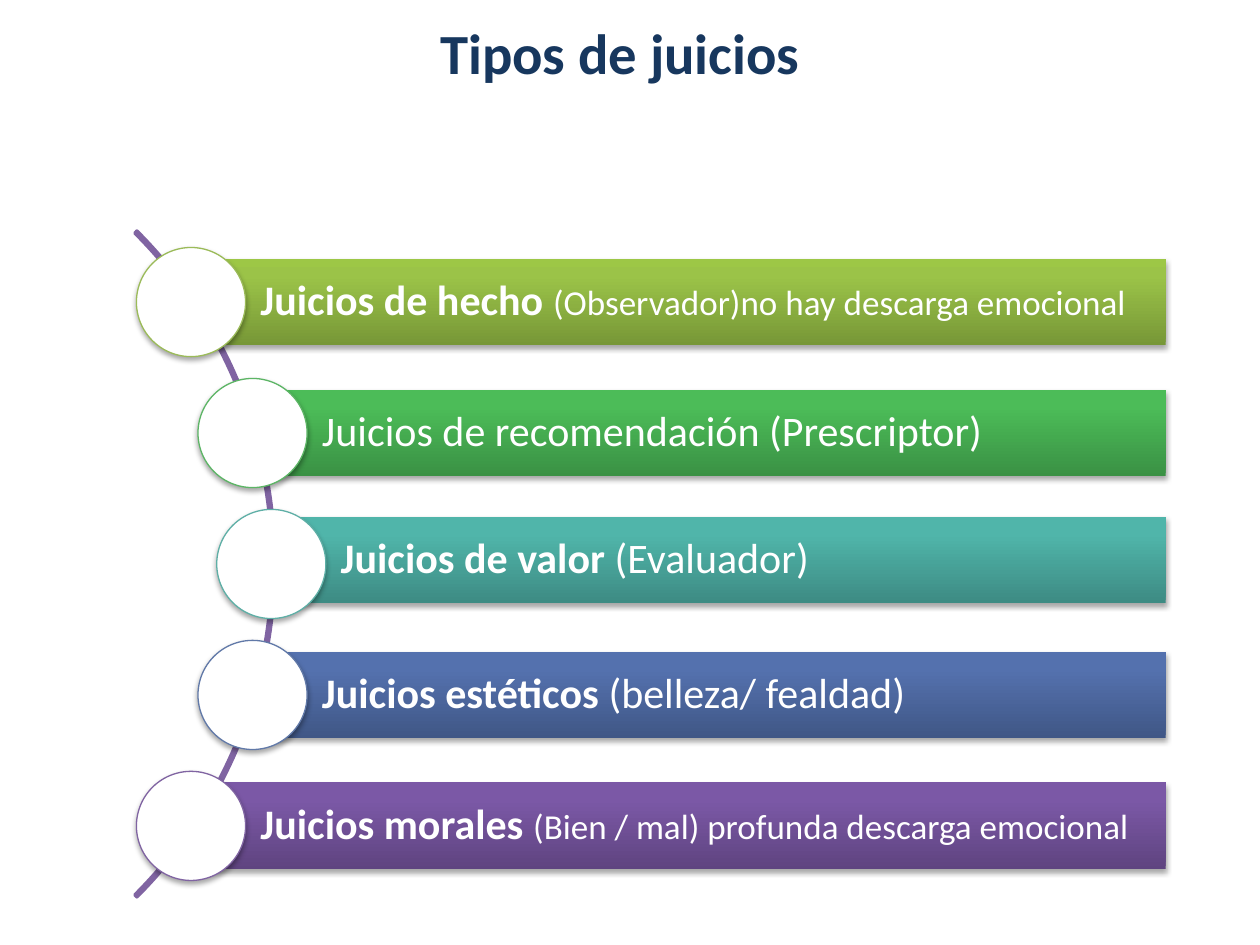
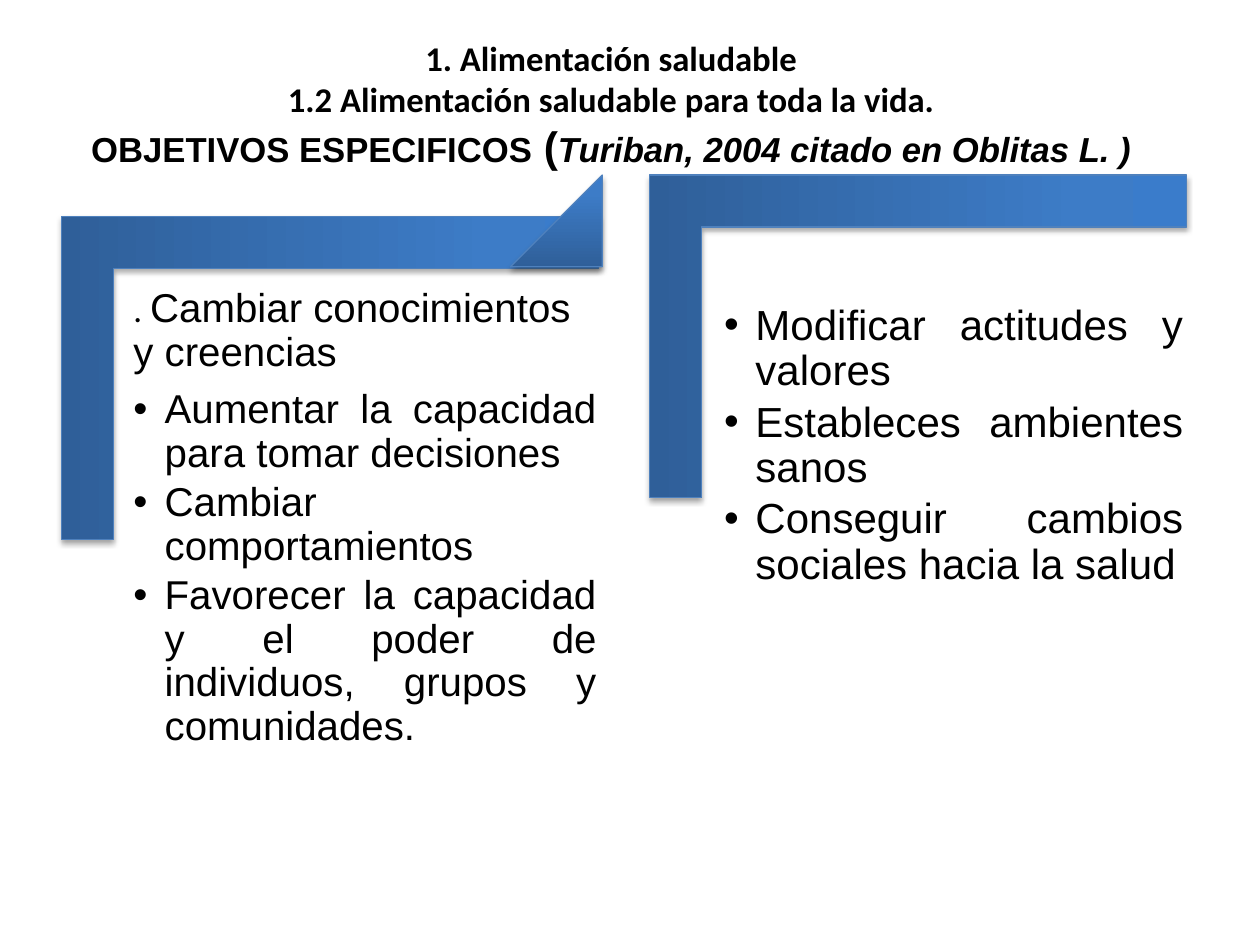
"""Builds two slides: the kinds of judgement and the aims of healthy eating."""
from copy import deepcopy
from math import sqrt

from lxml.etree import SubElement
from pptx import Presentation
from pptx.dml.color import RGBColor
from pptx.enum.shapes import MSO_SHAPE as Preset
from pptx.enum.text import MSO_ANCHOR as Anchor, MSO_AUTO_SIZE as AutoSize, PP_ALIGN as Align
from pptx.oxml.ns import qn
from pptx.util import Cm, Pt

WHITE, BLACK, NAVY = "FFFFFF", "000000", "17375E"
PURPLE, BLUE_EDGE = "8064A2", "4F81BD"
BLUE_GRADIENT = ("2F5F99", "3D7CC7", "3A7CCB")
STOPS = (0, 0.8, 1)


def rgb(code):
    return RGBColor.from_string(code)


def add_bullet(paragraph, indent=0.63):
    paragraph.level = 1
    props = paragraph._p.get_or_add_pPr()
    props.set("marL", str(Cm(indent)))
    props.set("indent", str(-Cm(indent)))
    SubElement(props, qn("a:buFont"), typeface="Arial")
    SubElement(props, qn("a:buChar"), char="•")


def write(frame, paragraphs, font="Calibri", size=24, color=BLACK, bold=False, align=Align.LEFT,
          anchor=Anchor.TOP, insets=(0.25, 0.13, 0.25, 0.13), spacing=None):
    """Fills a frame; a paragraph is (runs, is_bullet, space_after), a run (text, changes)."""
    frame.word_wrap = True
    frame.auto_size = AutoSize.NONE
    frame.vertical_anchor = anchor
    frame.margin_left, frame.margin_top, frame.margin_right, frame.margin_bottom = map(Cm, insets)
    for number, (runs, is_bullet, after) in enumerate(paragraphs):
        paragraph = frame.add_paragraph() if number else frame.paragraphs[0]
        if is_bullet:
            add_bullet(paragraph)
        paragraph.alignment = Align.JUSTIFY if is_bullet else align
        paragraph.space_after = Pt(after)
        if spacing:
            paragraph.line_spacing = spacing
        for text, changes in runs:
            style = {"font": font, "size": size, "bold": bold, "italic": False} | changes
            for index, line in enumerate(text.split("\n")):
                if index:
                    paragraph.add_line_break()
                run = paragraph.add_run()
                run.text = line
                run.font.name = style["font"]
                run.font.size = Pt(style["size"])
                run.font.bold = style["bold"]
                run.font.italic = style["italic"]
                run.font.color.rgb = rgb(color)


class Deck:
    """Holds the shared style and the current slide."""

    def __init__(self):
        self.file = Presentation()
        self.file.slide_width, self.file.slide_height = Cm(25.4), Cm(19.05)
        self.slide = None

    def add_slide(self, title, box, **style):
        self.slide = self.file.slides.add_slide(self.file.slide_layouts[5])
        heading = self.slide.shapes.title
        heading.left, heading.top, heading.width, heading.height = map(Cm, box)
        write(heading.text_frame, [(title, False, 0)], bold=True,
              align=Align.CENTER, anchor=Anchor.MIDDLE, **style)

    def shape(self, preset, box, fill=None, edge=None, edge_width=0.75, adjust=(), shadow=True):
        shape = self.slide.shapes.add_shape(preset, *map(Cm, box))
        for index, value in enumerate(adjust):
            shape.adjustments[index] = value
        if isinstance(fill, tuple):
            self.gradient(shape, fill)
        elif fill:
            shape.fill.solid()
            shape.fill.fore_color.rgb = rgb(fill)
        else:
            shape.fill.background()
        if edge:
            shape.line.color.rgb = rgb(edge)
            shape.line.width = Pt(edge_width)
        else:
            shape.line.fill.background()
        shape.shadow.inherit = False
        if shadow:
            self.drop_shadow(shape)
        return shape

    def gradient(self, shape, colors):
        shape.fill.gradient()
        shape.fill.gradient_angle = 90
        stop_list = shape._element.spPr.find(".//" + qn("a:gsLst"))
        stop_list.append(deepcopy(stop_list[0]))
        for stop, position, color in zip(shape.fill.gradient_stops, STOPS, colors):
            stop.position = position
            stop.color.rgb = rgb(color)

    def drop_shadow(self, shape):
        effects = shape._element.spPr.find(qn("a:effectLst"))
        outer = SubElement(effects, qn("a:outerShdw"), blurRad=str(Pt(3.1)),
                           dist=str(Pt(1.8)), dir="5400000", rotWithShape="0")
        shade = SubElement(outer, qn("a:srgbClr"), val=BLACK)
        SubElement(shade, qn("a:alpha"), val="35000")

    def corner(self, left, top, width=10.82, height=6.5):
        shift = (width - height) / 2
        box = (left + shift, top - shift, height, width)
        bracket = self.shape(Preset.CORNER, box, BLUE_GRADIENT, BLUE_EDGE, adjust=(0.161, 0.161))
        bracket.rotation = 90

    def text(self, box, paragraphs, **style):
        frame = self.slide.shapes.add_textbox(*map(Cm, box)).text_frame
        write(frame, paragraphs, **style)


def build_judgements(deck):
    deck.add_slide([("Tipos de juicios", {})], (1.07, 0.5, 22.86, 1.09), size=32.4, color=NAVY)
    center_x, center_y, arc_radius, ring_radius = -3.95, 11.37, 9.49, 9.42
    step, bar_height, bar_right, dot = 2.64, 1.75, 23.5, 2.2
    deck.shape(Preset.BLOCK_ARC,
               (center_x - arc_radius, center_y - arc_radius, 2 * arc_radius, 2 * arc_radius),
               edge=PURPLE, edge_width=2, adjust=(189, 27, 0.003), shadow=False)
    strong, small = {"bold": True}, {"size": 20}
    judgements = [
        ([("Juicios de hecho ", strong), ("(Observador)no hay descarga emocional", small)],
         ("779737", "9BC348", "9DC746"), "9BBB59", 0),
        ([("Juicios de recomendación (Prescriptor)", {})],
         ("3A9144", "4CBC58", "4ABF57"), "5CB565", 0),
        ([("Juicios de valor ", strong), ("(Evaluador)", {})],
         ("3D8B83", "50B5AA", "4EB8AC"), "5EAFA6", -0.08),
        ([("Juicios estéticos ", strong), ("(belleza/ fealdad)", {})],
         ("405786", "5471AE", "5271B0"), "6179A8", 0),
        ([("Juicios morales ", strong), ("(Bien / mal) profunda descarga emocional", small)],
         ("5F4480", "7B58A6", "7C57A8"), PURPLE, 0),
    ]
    for row, (label, colors, edge, nudge) in enumerate(judgements):
        offset = (row - 2) * step
        x = center_x + sqrt(ring_radius ** 2 - offset ** 2)
        y = center_y + offset
        bar = deck.shape(Preset.RECTANGLE,
                         (x, y - bar_height / 2 + nudge, bar_right - x, bar_height), colors)
        write(bar.text_frame, [(label, False, 0)], color=WHITE, anchor=Anchor.MIDDLE,
              insets=(1.4, 0.18, 0.18, 0.18), spacing=0.9)
        deck.shape(Preset.OVAL, (x - dot / 2, y - dot / 2, dot, dot), WHITE, edge)


def build_objectives(deck):
    arial = {"font": "Arial"}
    title = [
        ("1. Alimentación saludable\n1.2 Alimentación saludable para toda la vida.\n", {}),
        ("OBJETIVOS ESPECIFICOS", arial),
        (" (", arial | {"size": 24.3}),
        ("Turiban, 2004 citado en Oblitas L. )", arial | {"italic": True}),
    ]
    deck.add_slide(title, (0.89, 0.5, 22.86, 3.18), size=19.8)

    def bullets(*lines):
        return [([(line, {})], True, 3.5) for line in lines]

    knowledge = [([(". ", {"font": "Calibri", "size": 20}),
                   ("Cambiar conocimientos y creencias", {})], False, 8)]
    knowledge += bullets("Aumentar la capacidad para tomar decisiones",
                         "Cambiar comportamientos",
                         "Favorecer la capacidad y el poder de individuos, grupos y comunidades.")
    attitudes = bullets("Modificar actitudes y valores", "Estableces ambientes sanos",
                        "Conseguir cambios sociales hacia la salud")
    columns = [
        (1.24, 4.37, 5.61, knowledge, 23, (0.2, 0.2, 0.2, 0.2)),
        (13.1, 3.53, 4.6, attitudes, 24, (0.25, 1.53, 0.25, 0.25)),
    ]
    for left, top, text_top, aims, size, insets in columns:
        deck.corner(left, top)
        deck.text((left + 1.25, text_top, 9.75, 8.56), aims, font="Arial", size=size,
                  insets=insets, spacing=0.9)
    deck.shape(Preset.ISOSCELES_TRIANGLE, (10.29, 3.53, 1.85, 1.85), BLUE_GRADIENT, BLUE_EDGE,
               adjust=(1,))


def main():
    deck = Deck()
    build_judgements(deck)
    build_objectives(deck)
    deck.file.save("out.pptx")


if __name__ == "__main__":
    main()
